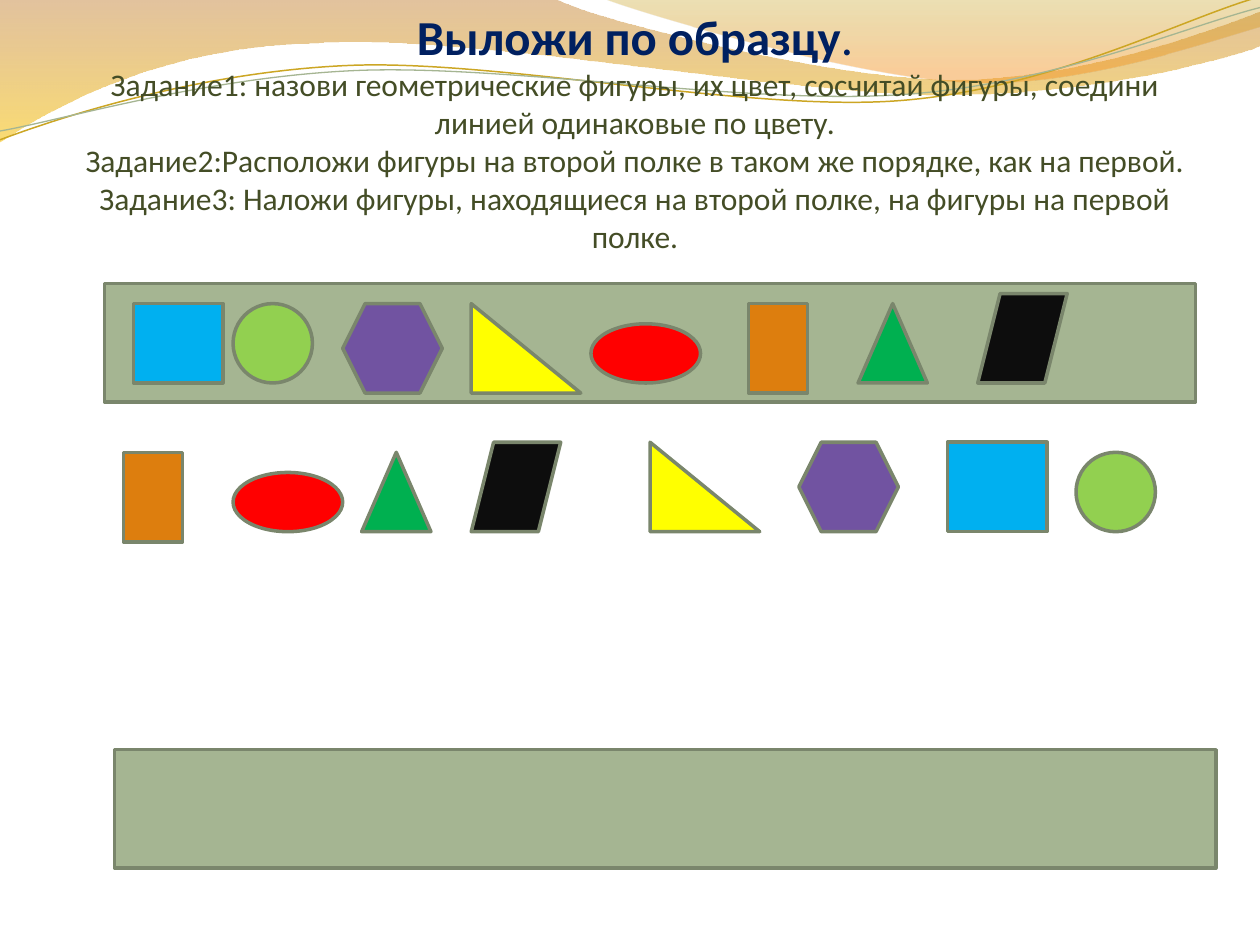
from dataclasses import dataclass
from typing import NamedTuple

from lxml.etree import SubElement
from pptx import Presentation
from pptx.dml.color import RGBColor as Rgb
from pptx.enum.shapes import MSO_SHAPE as Kind
from pptx.enum.text import MSO_ANCHOR as Anchor, MSO_AUTO_SIZE as Auto, PP_ALIGN as Align
from pptx.oxml.ns import qn
from pptx.util import Inches, Pt


@dataclass(frozen=True)
class Theme:
    font: str = "Calibri"
    head: str = "002060"
    task: str = "444D26"
    shelf: str = "A5B592"
    edge: str = "7A866C"
    large: float = 27.9
    small: float = 18
    width: float = 2


class Figure(NamedTuple):
    kind: Kind
    fill: str
    wide: float
    high: float


class Spot(NamedTuple):
    fig: Figure
    left: float
    top: float


class Stop(NamedTuple):
    at: float
    color: str
    alpha: int


class Wave(NamedTuple):
    start: tuple
    steps: list
    stops: tuple = ()
    color: str = ""
    width: float = 0


THEME = Theme()
HEAD = "Выложи по образцу"
TASKS = (
    "Задание1: назови геометрические фигуры, их цвет, сосчитай фигуры, соедини линией одинаковые по цвету.",
    "Задание2:Расположи фигуры на второй полке в таком же порядке, как на первой.",
    "Задание3: Наложи фигуры, находящиеся на второй полке, на фигуры на первой полке.",
)

BLOCK = Figure(Kind.RECTANGLE, "DD7E0E", 0.47, 0.71)
OVAL = Figure(Kind.OVAL, "FF0000", 0.87, 0.47)
PEAK = Figure(Kind.ISOSCELES_TRIANGLE, "00B050", 0.55, 0.63)
SLANT = Figure(Kind.PARALLELOGRAM, "0D0D0D", 0.71, 0.71)
WEDGE = Figure(Kind.RIGHT_TRIANGLE, "FFFF00", 0.87, 0.71)
HEX = Figure(Kind.HEXAGON, "7153A1", 0.79, 0.71)
BLUE = Figure(Kind.RECTANGLE, "00B0F0", 0.79, 0.71)
DISC = Figure(Kind.OVAL, "92D050", 0.63, 0.63)
SHELF = Figure(Kind.RECTANGLE, THEME.shelf, 8.66, 0.94)

SPOTS = (
    Spot(SHELF, 0.83, 2.25),
    Spot(BLOCK, 0.98, 3.59),
    Spot(OVAL, 1.85, 3.75),
    Spot(PEAK, 2.87, 3.59),
    Spot(SLANT, 3.74, 3.51),
    Spot(WEDGE, 5.16, 3.51),
    Spot(HEX, 6.34, 3.51),
    Spot(BLUE, 7.52, 3.51),
    Spot(DISC, 8.54, 3.59),
    Spot(DISC, 1.85, 2.41),
    Spot(HEX, 2.72, 2.41),
    Spot(WEDGE, 3.74, 2.41),
    Spot(OVAL, 4.69, 2.57),
    Spot(BLOCK, 5.94, 2.41),
    Spot(PEAK, 6.81, 2.41),
    Spot(SLANT, 7.76, 2.33),
    Spot(SHELF._replace(wide=8.74), 0.91, 5.95),
    Spot(BLUE._replace(wide=0.71, high=0.63), 1.06, 2.41),
)

WAVES = (
    Wave((0, 0), [
        (4.4, -0.01),
        (4.76, 0.17, 6.64, 0.63, 7.58, 0.63),
        (8.53, 0.63, 9.58, 0.26, 10, 0.09),
        (10.01, 0.36),
        (9.83, 0.44, 8.7, 0.76, 7.46, 0.75),
        (6.22, 0.75, 3.82, 0.28, 2.57, 0.34),
        (1.29, 0.36, 0.46, 0.83, -0.01, 1.13),
    ], (Stop(0, "C07A28", 45), Stop(1, "F7BF00", 55))),
    Wave((4.79, -0.01), [
        (5.09, 0.11, 6.82, 0.62, 7.69, 0.65),
        (8.56, 0.69, 9.61, 0.32, 10, 0.21),
        (10, 0),
    ], (Stop(0, "C09709", 30), Stop(0.8, "F59320", 45))),
    Wave((0, 1.11), [
        (0.48, 0.93, 1.58, 0.57, 2.77, 0.52),
        (3.95, 0.47, 5.93, 0.89, 7.13, 0.8),
        (8.33, 0.71, 9.38, 0.15, 9.98, -0.02),
    ], color="CCA624", width=0.85),
    Wave((0, 1.04), [
        (0.47, 0.96, 1.64, 0.61, 2.83, 0.56),
        (4.03, 0.51, 5.97, 0.84, 7.17, 0.75),
        (8.36, 0.67, 9.41, 0.21, 10, 0.06),
    ], color=THEME.shelf, width=0.75),
)


def outline(slide, wave: Wave):
    """Build the outline of a wave from lines and cubic curves."""
    unit = 1000
    flat = [round(num * unit) for step in (wave.start, *wave.steps) for num in step]
    first, *rest = zip(flat[::2], flat[1::2])
    pen = slide.shapes.build_freeform(*first, scale=Inches(1) / unit)
    pen.add_line_segments(rest, close=bool(wave.stops))
    shape = pen.convert_to_shape()
    track = next(shape._element.iter(qn("a:path")))
    lines = iter(track.findall(qn("a:lnTo")))
    for step in wave.steps:
        node = next(lines)
        if len(step) == 6:
            node.tag = qn("a:cubicBezTo")
            for extra in (next(lines), next(lines)):
                node.append(extra[0])
                track.remove(extra)
    return shape


def draw_wave(slide, wave: Wave) -> None:
    """Draw a wave as a gradient band or a thin line."""
    shape = outline(slide, wave)
    shape.shadow.inherit = False
    if not wave.stops:
        shape.fill.background()
        shape.line.color.rgb = Rgb.from_string(wave.color)
        shape.line.width = Pt(wave.width)
        return
    shape.line.fill.background()
    shape.fill.gradient()
    shape.fill.gradient_angle = 270
    for mark, stop in zip(shape.fill.gradient_stops, wave.stops):
        mark.position = stop.at
        mark.color.rgb = Rgb.from_string(stop.color)
    for node, stop in zip(shape._element.spPr.iter(qn("a:srgbClr")), wave.stops):
        SubElement(node, qn("a:alpha")).set("val", str(stop.alpha * 1000))


def draw_spot(slide, spot: Spot) -> None:
    """Draw one figure at its place."""
    fig = spot.fig
    box = map(Inches, (spot.left, spot.top, fig.wide, fig.high))
    shape = slide.shapes.add_shape(fig.kind, *box)
    shape.shadow.inherit = False
    shape.fill.solid()
    shape.fill.fore_color.rgb = Rgb.from_string(fig.fill)
    shape.line.color.rgb = Rgb.from_string(THEME.edge)
    shape.line.width = Pt(THEME.width)


def add_run(para, text: str, size: float, color: str, bold: bool = False) -> None:
    """Add a formatted run to a paragraph."""
    run = para.add_run()
    run.text = text
    run.font.name, run.font.size, run.font.bold = THEME.font, Pt(size), bold
    run.font.color.rgb = Rgb.from_string(color)


def draw_title(slide) -> None:
    """Place the title in front of the waves and fill it."""
    title = slide.shapes.title
    slide.shapes._spTree.append(title._element)
    title.left, title.top, title.width, title.height = map(Inches, (0.5, 0.77, 9.08, 1.25))
    frame = title.text_frame
    frame.auto_size, frame.word_wrap = Auto.NONE, True
    frame.vertical_anchor = Anchor.BOTTOM
    frame.margin_left = frame.margin_right = frame.margin_bottom = 0
    frame.margin_top = Inches(0.05)
    para = frame.paragraphs[0]
    para.alignment = Align.CENTER
    add_run(para, HEAD, THEME.large, THEME.head, True)
    add_run(para, ".", THEME.large, THEME.head)
    for task in TASKS:
        para.add_line_break()
        add_run(para, task, THEME.small, THEME.task)
    for node in para._p.findall(qn("a:br")):
        SubElement(node, qn("a:rPr")).set("sz", str(THEME.small * 100))


def main() -> None:
    """Build the slide and save it."""
    deck = Presentation()
    deck.slide_width, deck.slide_height = Inches(10), Inches(7.5)
    slide = deck.slides.add_slide(deck.slide_layouts[5])
    for wave in WAVES:
        draw_wave(slide, wave)
    draw_title(slide)
    for spot in SPOTS:
        draw_spot(slide, spot)
    deck.save("out.pptx")


if __name__ == "__main__":
    main()
